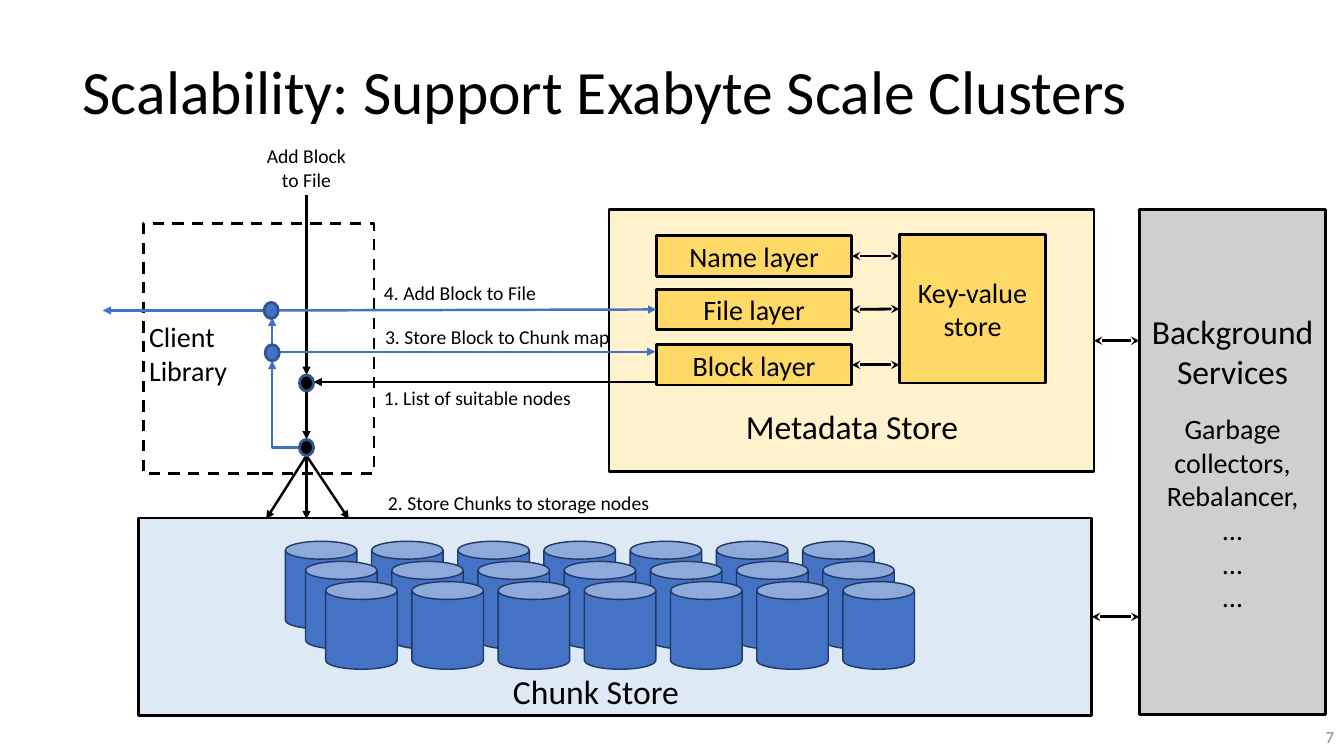
from dataclasses import dataclass

from lxml.etree import SubElement
from pptx import Presentation
from pptx.dml.color import RGBColor
from pptx.enum.dml import MSO_LINE_DASH_STYLE as Dash
from pptx.enum.shapes import MSO_CONNECTOR_TYPE as Link, MSO_SHAPE as Preset
from pptx.enum.text import MSO_VERTICAL_ANCHOR as Anchor, PP_PARAGRAPH_ALIGNMENT as Align
from pptx.oxml.ns import qn
from pptx.util import Inches, Pt


@dataclass(frozen=True)
class Theme:
    font: str = "Calibri"
    black: str = "000000"
    blue: str = "4472C4"
    elbow_blue: str = "3F6FC3"
    dot_edge: str = "325491"
    can_edge: str = "1F3864"
    chunk_fill: str = "DDEAF6"
    metadata_fill: str = "FFF2CC"
    layer_fill: str = "FFD966"
    services_fill: str = "D0CECE"
    number_grey: str = "888888"
    title: int = 44
    store: int = 24
    layer: int = 20
    step: int = 14
    number: int = 12


THEME = Theme()


def rgb(code):
    return RGBColor.from_string(code)


def write_text(frame, text, *, size, color=THEME.black, align=Align.CENTER,
               anchor=Anchor.MIDDLE, wrap=True, before=0, spacing=None):
    """Fill an empty frame, or append further paragraphs to a filled one."""
    frame.word_wrap = wrap
    frame.vertical_anchor = anchor
    for index, line in enumerate(text.split("\n")):
        paragraph = frame.add_paragraph() if frame.text else frame.paragraphs[0]
        paragraph.alignment = align
        if spacing:
            paragraph.line_spacing = spacing
        if before and index == 0:
            paragraph.space_before = Pt(before)
        run = paragraph.add_run()
        run.text = line
        run.font.name = THEME.font
        run.font.size = Pt(size)
        run.font.color.rgb = rgb(color)


def add_label(slide, box, text, **style):
    label = slide.shapes.add_textbox(*map(Inches, box))
    write_text(label.text_frame, text, **{"anchor": Anchor.TOP, **style})


def add_block(shapes, box, fill=None, *, preset=Preset.RECTANGLE,
              edge=THEME.black, weight=2, dash=None):
    block = shapes.add_shape(preset, *map(Inches, box))
    block.shadow.inherit = False
    if fill:
        block.fill.solid()
        block.fill.fore_color.rgb = rgb(fill)
    else:
        block.fill.background()
    block.line.color.rgb = rgb(edge)
    block.line.width = Pt(weight)
    if dash:
        block.line.dash_style = dash
    return block


def add_arrow(slide, start, end, *, color=THEME.black, weight=1.75, tip="triangle",
              both=False, elbow=False, begin_at=None, end_at=None):
    kind = Link.ELBOW if elbow else Link.STRAIGHT
    arrow = slide.shapes.add_connector(kind, *map(Inches, (*start, *end)))
    if elbow:  # a single bend
        arrow._element.spPr.find(qn("a:prstGeom")).set("prst", "bentConnector2")
    if begin_at:
        arrow.begin_connect(*begin_at)
    if end_at:
        arrow.end_connect(*end_at)
    arrow.line.color.rgb = rgb(color)
    arrow.line.width = Pt(weight)
    line = arrow.line._get_or_add_ln()
    for end_name in ("headEnd", "tailEnd") if both else ("tailEnd",):
        SubElement(line, qn(f"a:{end_name}"), type=tip)
    SubElement(arrow._element.spPr, qn("a:effectLst"))


def add_exchange(slide, start, end, **joins):
    add_arrow(slide, start, end, weight=2, tip="stealth", both=True, **joins)


def add_chunk_store(slide):
    add_block(slide.shapes, (1.37, 5.14, 9.46, 1.96), THEME.chunk_fill)
    # Seven stacks of three disks, rightmost stack at the back
    for column in reversed(range(7)):
        stack = slide.shapes.add_group_shape()
        for row in range(3):
            disk = (2.83 + 0.855 * column + 0.2 * row, 5.37 + 0.2 * row, 0.71, 0.87)
            add_block(stack.shapes, disk, THEME.blue, preset=Preset.CAN,
                      edge=THEME.can_edge, weight=1)
    add_label(slide, (2.75, 6.61, 6.32, 0.5), "Chunk Store", size=THEME.store)


def add_metadata_store(slide):
    """Return the store and its File layer, which other parts join."""
    store = add_block(slide.shapes, (6.04, 2.08, 4.81, 2.6), THEME.metadata_fill)
    key_value = add_block(slide.shapes, (8.92, 2.33, 1.45, 1.47), THEME.layer_fill)
    write_text(key_value.text_frame, "Key-value store", size=THEME.layer)
    layers = {}
    for name, top in (("Name", 2.34), ("File", 2.87), ("Block", 3.42)):
        layers[name] = add_block(slide.shapes, (6.51, top, 1.94, 0.4), THEME.layer_fill)
        write_text(layers[name].text_frame, f"{name} layer", size=THEME.layer)
        middle = top + 0.2
        add_exchange(slide, (8.45, middle), (8.92, middle), begin_at=(layers[name], 3),
                     end_at=(key_value, 1) if name == "File" else None)
    add_label(slide, (6.16, 3.98, 4.58, 0.5), "Metadata Store", size=THEME.store)
    return store, layers["File"]


def add_background_services(slide, metadata_store):
    services = add_block(slide.shapes, (11.3, 2.08, 1.85, 5.01), THEME.services_fill)
    write_text(services.text_frame, "Background Services", size=THEME.store)
    write_text(services.text_frame, "Garbage collectors,\nRebalancer,\n…\n…\n…",
               size=THEME.layer, before=14.4)
    add_exchange(slide, (10.85, 3.38), (11.3, 3.38), begin_at=(metadata_store, 3))
    add_exchange(slide, (10.83, 6.12), (11.3, 6.12))


def add_client_library(slide):
    add_block(slide.shapes, (1.42, 2.22, 2.29, 2.48), dash=Dash.DASH)
    add_label(slide, (1.38, 3.12, 0.99, 0.77), "Client\nLibrary", size=THEME.layer,
              align=Align.LEFT, wrap=False)
    add_label(slide, (1.76, 1.38, 2.56, 0.57), "Add Block\nto File", size=THEME.step)


def add_write_path(slide, file_layer):
    # Request going down through the client to the chunk store
    for start, end in (((3.04, 1.93), (3.04, 3.72)),
                       ((3.04, 3.87), (3.04, 4.36)),
                       ((6.51, 3.79), (3.11, 3.79))):
        add_arrow(slide, start, end)
    for target in (2.64, 3.04, 3.46):
        add_arrow(slide, (3.04, 4.52), (target, 5.15))

    # Acknowledgements going up and out to the metadata store
    add_arrow(slide, (2.97, 4.44), (2.7, 3.58), color=THEME.elbow_blue,
              weight=1.5, elbow=True)
    for start, end, join in (((2.78, 3.49), (6.5, 3.49), None),
                             ((2.77, 3.08), (6.51, 3.07), (file_layer, 1)),
                             ((2.7, 3.42), (2.7, 3.15), None),
                             ((2.61, 3.08), (1.02, 3.08), None)):
        add_arrow(slide, start, end, color=THEME.blue, end_at=join)

    # Stations on the path
    for left, top, fill in ((2.97, 3.72, THEME.black), (2.97, 4.36, THEME.black),
                            (2.62, 3, THEME.blue), (2.63, 3.42, THEME.blue)):
        add_block(slide.shapes, (left, top, 0.14, 0.16), fill,
                  preset=Preset.OVAL, edge=THEME.dot_edge)

    # Numbered steps
    for left, top, width, step in (
            (3.71, 3.78, 2.13, "1. List of suitable nodes"),
            (3.75, 4.82, 2.84, "2. Store Chunks to storage nodes"),
            (3.72, 3.17, 2.45, "3. Store Block to Chunk map"),
            (3.71, 2.74, 1.72, "4. Add Block to File")):
        add_label(slide, (left, top, width, 0.34), step, size=THEME.step,
                  align=Align.LEFT, wrap=False)


def add_title(slide, text):
    title = slide.shapes.title
    title.left, title.top, title.width, title.height = map(Inches, (0.72, 0.21, 11.5, 1.45))
    write_text(title.text_frame, text, size=THEME.title, align=Align.LEFT, spacing=0.9)


def main():
    deck = Presentation()
    deck.slide_width, deck.slide_height = Inches(13.33), Inches(7.5)
    slide = deck.slides.add_slide(deck.slide_layouts[5])
    add_title(slide, "Scalability: Support Exabyte Scale Clusters")
    add_chunk_store(slide)
    metadata_store, file_layer = add_metadata_store(slide)
    add_background_services(slide, metadata_store)
    add_client_library(slide)
    add_write_path(slide, file_layer)
    add_label(slide, (10.33, 7.11, 3, 0.4), "7", size=THEME.number,
              color=THEME.number_grey, align=Align.RIGHT, anchor=Anchor.MIDDLE)
    deck.save("out.pptx")


if __name__ == "__main__":
    main()
